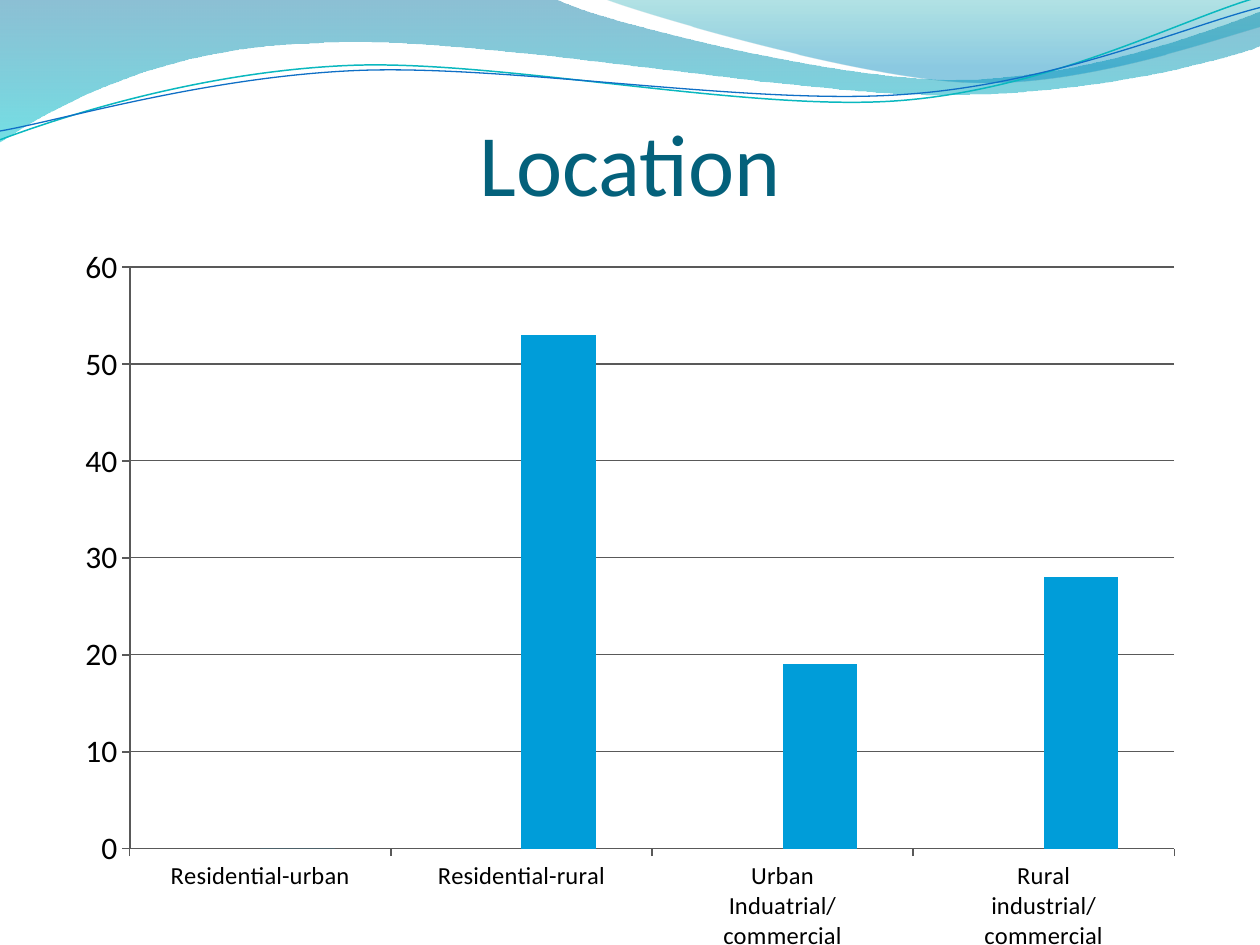
from lxml import etree
from pptx import Presentation
from pptx.chart.data import CategoryChartData
from pptx.dml.color import RGBColor
from pptx.enum.chart import XL_CHART_TYPE, XL_TICK_MARK
from pptx.enum.text import MSO_ANCHOR, MSO_AUTO_SIZE, PP_ALIGN
from pptx.oxml import parse_xml
from pptx.oxml.ns import nsdecls, qn
from pptx.util import Inches, Pt

# An outline is a list of steps: one point for a straight line,
# or two handles and an end point for a curve.
BACK_WAVE = [
    [(0, 0)],
    [(4.4, -0.01)],
    [(4.76, 0.17), (6.64, 0.63), (7.58, 0.63)],
    [(8.53, 0.63), (9.58, 0.26), (10, 0.09)],
    [(10.01, 0.36)],
    [(9.83, 0.44), (8.7, 0.76), (7.46, 0.75)],
    [(6.22, 0.75), (3.82, 0.28), (2.57, 0.34)],
    [(1.29, 0.36), (0.46, 0.83), (-0.01, 1.13)],
]
FRONT_WAVE = [
    [(4.79, -0.01)],
    [(5.09, 0.11), (6.82, 0.62), (7.69, 0.65)],
    [(8.56, 0.69), (9.61, 0.32), (10, 0.21)],
    [(10, 0)],
]
TEAL_LINE = [
    [(0, 1.11)],
    [(0.48, 0.93), (1.58, 0.57), (2.77, 0.52)],
    [(3.95, 0.47), (5.93, 0.89), (7.13, 0.8)],
    [(8.33, 0.71), (9.38, 0.15), (9.98, -0.02)],
]
BLUE_LINE = [
    [(0, 1.04)],
    [(0.47, 0.96), (1.64, 0.61), (2.83, 0.56)],
    [(4.03, 0.51), (5.97, 0.84), (7.17, 0.75)],
    [(8.36, 0.67), (9.41, 0.21), (10, 0.06)],
]
CATEGORIES = ["Residential-urban", "Residential-rural",
              "Urban Induatrial/commercial", "Rural industrial/commercial"]
SERIES = [("Series 1", [None] * 4, "0F6FC6"),
          ("Series 2", [0, 53, 19, 28], "009DD9")]


def rgb(color):
    return RGBColor.from_string(color)


def set_format(target, values):
    for name, value in values.items():
        setattr(target, name, value)


def add_outline(s, box, steps, close):
    """Draw the step ends as a freeform, then bend the steps that have handles."""
    left, top = box[:2]
    steps = [[(left + Inches(x), top + Inches(y)) for x, y in step] for step in steps]
    ends = [step[-1] for step in steps]
    builder = s.shapes.build_freeform(*ends[0])
    builder.add_line_segments(ends[1:], close=close)
    sp = builder.convert_to_shape()
    sp.shadow.inherit = False
    for segment, step in zip(list(sp._element.iter(qn("a:lnTo"))), steps[1:]):
        if len(step) == 3:
            points = "".join(f'<a:pt x="{x - sp.left}" y="{y - sp.top}"/>'
                             for x, y in step)
            segment.getparent().replace(segment, parse_xml(
                f'<a:cubicBezTo {nsdecls("a")}>{points}</a:cubicBezTo>'))
    return sp


def add_wave(s, box, steps, stops):
    """Add a filled wave; stops hold position, colour and opacity percent."""
    sp = add_outline(s, box, steps, True)
    sp.line.fill.background()
    sp.fill.gradient()
    sp.fill.gradient_angle = 270
    for stop, (position, color, _) in zip(sp.fill.gradient_stops, stops):
        stop.position = position
        stop.color.rgb = rgb(color)
    for clr, (_, _, opacity) in zip(sp._element.spPr.iter(qn("a:srgbClr")), stops):
        etree.SubElement(clr, qn("a:alpha")).set("val", str(opacity * 1000))


def add_wave_line(s, box, steps, color, width):
    sp = add_outline(s, box, steps, False)
    sp.fill.background()
    sp.line.color.rgb = rgb(color)
    sp.line.width = Pt(width)


def add_header(s, box):
    add_wave(s, box, BACK_WAVE, [(0, "0074A1", 45), (1, "00C6CF", 55)])
    add_wave(s, box, FRONT_WAVE, [(0, "00A1A9", 30), (0.8, "008BBF", 45)])
    add_wave_line(s, box, TEAL_LINE, "0AB8BF", 0.85)
    add_wave_line(s, box, BLUE_LINE, "0F6FC6", 0.75)


def set_title(s, box, text):
    title = s.shapes.title
    s.shapes._spTree.append(title._element)  # in front of the header waves
    set_format(title, dict(zip(("left", "top", "width", "height"), box)))
    tf = title.text_frame
    set_format(tf, {"auto_size": MSO_AUTO_SIZE.NONE, "word_wrap": True,
                    "vertical_anchor": MSO_ANCHOR.BOTTOM,
                    "margin_left": 0, "margin_right": 0,
                    "margin_top": Inches(0.05), "margin_bottom": 0})
    p = tf.paragraphs[0]
    p.alignment = PP_ALIGN.CENTER
    r = p.add_run()
    r.text = text
    set_format(r.font, {"name": "Calibri", "size": Pt(50)})
    r.font.color.rgb = rgb("04617B")


def format_axis(axis, size, width):
    set_format(axis, {"major_tick_mark": XL_TICK_MARK.OUTSIDE,
                      "minor_tick_mark": XL_TICK_MARK.NONE})
    set_format(axis.tick_labels.font, {"name": "Calibri", "size": Pt(size)})
    axis.format.line.color.rgb = rgb("595959")
    axis.format.line.width = Pt(width)


def set_plot_area(chart, box, inner):
    """Fix the inner plot area at the box inner, within the chart's box."""
    left, top, width, height = box
    x, y, w, h = inner
    parts = {"x": (x - left) / width, "y": (y - top) / height,
             "w": w / width, "h": h / height}
    sizes = "".join(f'<c:{name} val="{value}"/>' for name, value in parts.items())
    plot_area = chart._chartSpace.chart.plotArea
    for old in plot_area.findall(qn("c:layout")):
        plot_area.remove(old)
    plot_area.insert(0, parse_xml(
        f'<c:layout {nsdecls("c")}><c:manualLayout><c:layoutTarget val="inner"/>'
        '<c:xMode val="edge"/><c:yMode val="edge"/>'
        f'{sizes}</c:manualLayout></c:layout>'))


def add_location_chart(s, box):
    data = CategoryChartData()
    data.categories = CATEGORIES
    for name, values, _ in SERIES:
        data.add_series(name, values)
    chart = s.shapes.add_chart(XL_CHART_TYPE.COLUMN_CLUSTERED, *box, data).chart
    set_format(chart, {"has_title": False, "has_legend": False})
    set_format(chart.font, {"name": "TeX Gyre Pagella", "size": Pt(10)})
    chart.font.color.rgb = rgb("000000")

    plot = chart.plots[0]
    set_format(plot, {"gap_width": 150, "overlap": 0, "vary_by_categories": False})
    for series, (_, _, color) in zip(plot.series, SERIES):
        series.format.fill.solid()
        series.format.fill.fore_color.rgb = rgb(color)

    format_axis(chart.category_axis, 14, 0.75)
    format_axis(chart.value_axis, 18, 1)
    set_format(chart.value_axis, {"minimum_scale": 0, "maximum_scale": 60,
                                  "major_unit": 10, "has_major_gridlines": True})
    grid = chart.value_axis.major_gridlines.format.line
    grid.color.rgb = rgb("595959")
    grid.width = Pt(0.75)
    left, top, width, height = box
    set_plot_area(chart, box, (left + Inches(0.53), top + Inches(0.26),
                               width - Inches(0.71), height - Inches(1.01)))


def main():
    prs = Presentation()
    prs.slide_width, prs.slide_height = Inches(10), Inches(7.5)
    s = prs.slides.add_slide(prs.slide_layouts[5])
    add_header(s, (0, 0, Inches(10), Inches(1.13)))
    set_title(s, (Inches(0.5), Inches(0.77), Inches(9), Inches(0.93)), "Location")
    add_location_chart(s, (Inches(0.5), Inches(1.86), Inches(9), Inches(5.64)))
    prs.save("out.pptx")


if __name__ == "__main__":
    main()
